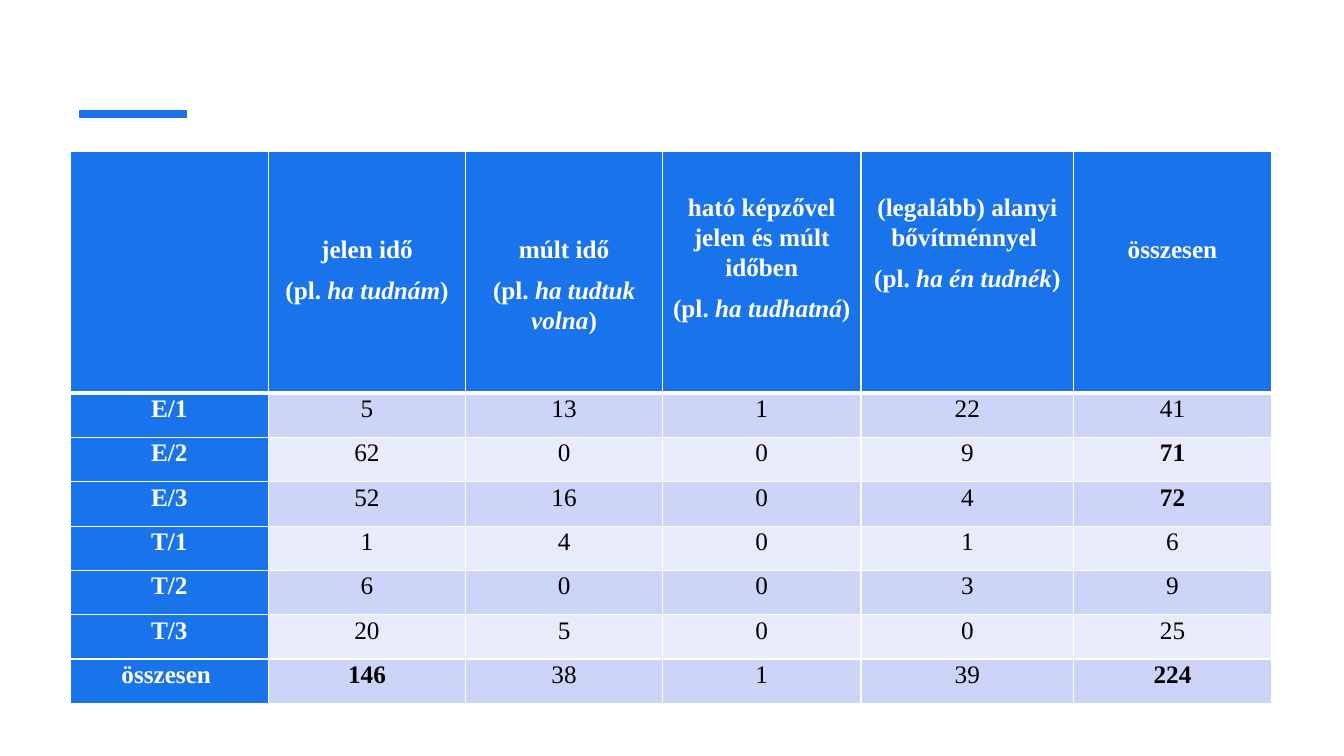
from lxml import etree
from pptx import Presentation
from pptx.dml.color import RGBColor
from pptx.enum.shapes import MSO_CONNECTOR
from pptx.enum.text import PP_ALIGN
from pptx.oxml import parse_xml
from pptx.oxml.ns import nsdecls, qn
from pptx.util import Inches, Pt

BLUE, WHITE, BLACK = "1973EB", "FFFFFF", "000000"
BANDS = ["CCD5F7", "E8EBFB"]
LINE_STEP = 0.41  # one text line with its spacing, in inches


def rgb(value):
    return RGBColor.from_string(value)


def set_borders(cell, widths):
    """Draw white borders; widths maps the sides L, R, T, B to points."""
    tcPr = cell._tc.get_or_add_tcPr()
    for i, side in enumerate("LRTB"):
        tcPr.insert(i, parse_xml(
            f'<a:ln{side} {nsdecls("a")} w="{Pt(widths[side])}"><a:solidFill>'
            f'<a:srgbClr val="{WHITE}"/></a:solidFill></a:ln{side}>'))


# Heading: lines left free above, title, example in italics
headings = [
    (0, "", ""),
    (2, "jelen idő", "ha tudnám"),
    (2, "múlt idő", "ha tudtuk volna"),
    (1, "ható képzővel jelen és múlt időben", "ha tudhatná"),
    (1, "(legalább) alanyi bővítménnyel ", "ha én tudnék"),
    (2, "összesen", ""),
]
counts = [
    ("E/1", 5, 13, 1, 22, 41),
    ("E/2", 62, 0, 0, 9, 71),
    ("E/3", 52, 16, 0, 4, 72),
    ("T/1", 1, 4, 0, 1, 6),
    ("T/2", 6, 0, 0, 3, 9),
    ("T/3", 20, 5, 0, 0, 25),
    ("összesen ", 146, 38, 1, 39, 224),
]
highlighted = {71, 72, 146, 224}
col_widths = [1.96, 1.96, 1.95, 1.97, 2.11, 1.96]
row_heights = [2.4] + [0.44] * len(counts)

prs = Presentation()
prs.slide_width, prs.slide_height = Inches(13.33), Inches(7.5)
s = prs.slides.add_slide(prs.slide_layouts[6])

accent = s.shapes.add_connector(
    MSO_CONNECTOR.STRAIGHT, Inches(0.78), Inches(1.13), Inches(1.85), Inches(1.13))
accent.line.color.rgb = rgb(BLUE)
accent.line.width = Pt(6)
etree.SubElement(accent._element.spPr, qn("a:effectLst"))

table = s.shapes.add_table(
    len(row_heights), len(col_widths), Inches(0.7), Inches(1.5),
    Inches(sum(col_widths)), Inches(sum(row_heights))).table
for column, width in zip(table.columns, col_widths):
    column.width = Inches(width)
for row, height in zip(table.rows, row_heights):
    row.height = Inches(height)

for i, row in enumerate([headings] + counts):
    for j, value in enumerate(row):
        cell = table.cell(i, j)
        tf = cell.text_frame
        is_label = i == 0 or j == 0
        cell.margin_left = cell.margin_right = Inches(0.07)
        cell.margin_top = cell.margin_bottom = 0
        if i == 0:
            free_lines, title, example = value
            cell.margin_top = Inches(free_lines * LINE_STEP)
            tf.text = title
            if example:
                p = tf.add_paragraph()
                for text in ("(pl. ", example, ")"):
                    r = p.add_run()
                    r.text = text
                    r.font.italic = text == example
        else:
            tf.text = str(value)

        for p in tf.paragraphs:
            p.alignment = PP_ALIGN.CENTER
            p.line_spacing = 1.07
            p.space_after = Pt(8)
            for r in p.runs:
                r.font.name = "Times New Roman"
                r.font.size = Pt(18)
                r.font.bold = is_label or value in highlighted
                r.font.color.rgb = rgb(WHITE if is_label else BLACK)

        cell.fill.solid()
        cell.fill.fore_color.rgb = rgb(BLUE if is_label else BANDS[(i - 1) % 2])
        set_borders(cell, {"L": 1, "R": 1, "T": 3 if i == 1 else 1, "B": 3 if i == 0 else 1})

prs.save("out.pptx")
